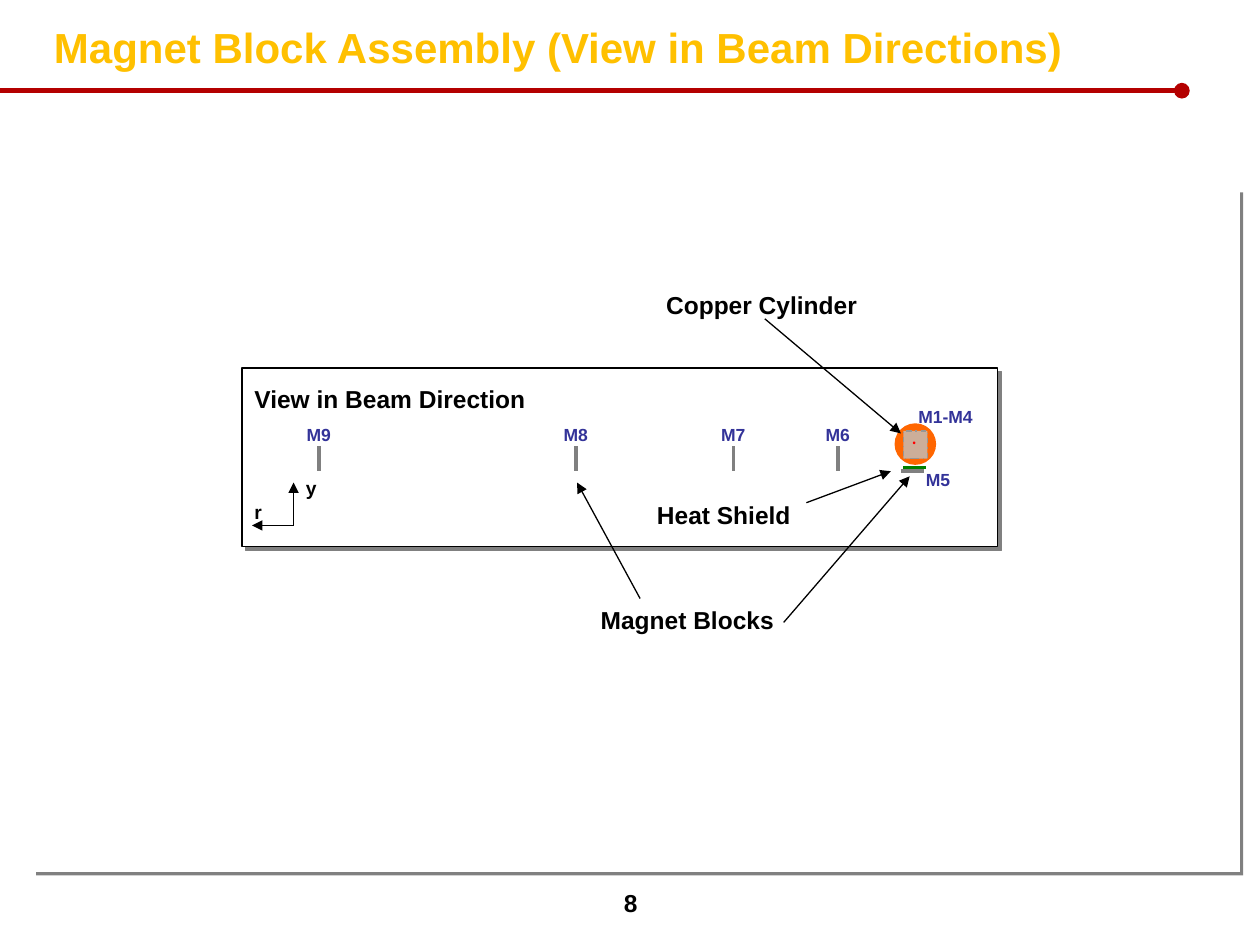
from pptx import Presentation
from pptx.dml.color import RGBColor
from pptx.enum.dml import MSO_LINE
from pptx.enum.shapes import MSO_CONNECTOR, MSO_SHAPE
from pptx.enum.text import MSO_ANCHOR, MSO_AUTO_SIZE, PP_ALIGN as Align
from pptx.oxml.ns import qn
from pptx.util import Inches, Pt
from lxml.etree import SubElement

COLORS = {
    "title": "FFC000", "rule": "B40000", "black": "000000", "white": "FFFFFF",
    "shadow": "808080", "magnet": "808080", "copper": "FF6600", "beam": "FF0000",
    "core": "C0C0C0", "core edge": "969696", "shield": "008000", "label": "333399",
}

TITLE = "Magnet Block Assembly (View in Beam Directions)"
PAGE_NUMBER = "8"
MAGNET_TOP, MAGNET_BOTTOM = 3.54, 3.74
MAGNETS = {"M6": 6.65, "M7": 5.82, "M8": 4.57, "M9": 2.53}
MAGNET_LABEL_WIDTH = 0.39
RING_LABELS = [("M1-M4", 7.19, 3.17, 0.63), ("M5", 7.25, 3.67, MAGNET_LABEL_WIDTH)]
CALLOUTS = [
    ("View in Beam Direction", 1.92, 3, 2.42, Align.LEFT),
    ("Heat Shield", 5.08, 3.92, 1.33, Align.CENTER),
    ("Copper Cylinder", 5.17, 2.25, 1.75, Align.CENTER),
    ("Magnet Blocks", 4.58, 4.75, 1.75, Align.CENTER),
]
AXIS_ORIGIN = (2.33, 4.17)
AXES = [("y", (2.33, 3.83), 2.33, 3.73), ("r", (2, 4.17), 1.92, 3.92)]
POINTERS = [
    ((6.4, 3.99), (7.07, 3.74)),
    ((6.07, 2.53), (7.15, 3.44)),
    ((6.22, 4.94), (7.22, 3.78)),
    ((5.08, 4.75), (4.58, 3.83)),
]

presentation = Presentation()
presentation.slide_width, presentation.slide_height = Inches(10), Inches(7.5)
slide = presentation.slides.add_slide(presentation.slide_layouts[6])


def rgb(name):
    return RGBColor.from_string(COLORS[name])


def add_text(text, left, top, width, height, size=14, color="black",
             align=Align.LEFT, wrap=True, anchor=MSO_ANCHOR.TOP):
    box = slide.shapes.add_textbox(*map(Inches, (left, top, width, height)))
    frame = box.text_frame
    frame.word_wrap = wrap
    frame.auto_size = MSO_AUTO_SIZE.SHAPE_TO_FIT_TEXT
    frame.vertical_anchor = anchor
    paragraph = frame.paragraphs[0]
    paragraph.text = text
    paragraph.alignment = align
    font = paragraph.font
    font.name, font.size, font.bold = "Arial", Pt(size), True
    font.color.rgb = rgb(color)


def add_line(start, end, color="black", width=0.75, tail=None):
    line = slide.shapes.add_connector(
        MSO_CONNECTOR.STRAIGHT, *map(Inches, (*start, *end)))
    line.line.color.rgb = rgb(color)
    line.line.width = Pt(width)
    if tail:
        SubElement(line.line._get_or_add_ln(), qn("a:tailEnd"), type=tail)
    SubElement(line._element.spPr, qn("a:effectLst"))


def add_shape(kind, left, top, width, height, fill, edge=None, shadow=False):
    shape = slide.shapes.add_shape(kind, *map(Inches, (left, top, width, height)))
    shape.fill.solid()
    shape.fill.fore_color.rgb = rgb(fill)
    if edge:
        shape.line.color.rgb = rgb(edge)
        shape.line.width = Pt(0.75)
    else:
        shape.line.fill.background()
    shape.shadow.inherit = False
    if shadow:
        effects = shape._element.spPr.find(qn("a:effectLst"))
        outer = SubElement(effects, qn("a:outerShdw"), dist=str(Pt(2.8)),
                           dir=str(45 * 60000), algn="ctr", rotWithShape="0")
        SubElement(outer, qn("a:srgbClr"), val=COLORS["shadow"])
    return shape


add_line((0, 0.72), (9.38, 0.72), "rule", 3, "oval")
add_text(PAGE_NUMBER, 3.42, 7, 3.17, 0.35, align=Align.CENTER)
add_text(TITLE, 0.33, 0.12, 8.28, 0.5, size=24, color="title", wrap=False,
         anchor=MSO_ANCHOR.MIDDLE)

add_shape(MSO_SHAPE.RECTANGLE, 0.26, 1.5, 9.58, 5.42, "white", shadow=True)
add_shape(MSO_SHAPE.RECTANGLE, 1.92, 2.92, 6, 1.42, "white", "black", shadow=True)

add_shape(MSO_SHAPE.OVAL, 7.1, 3.36, 0.33, 0.33, "copper")
add_line((7.15, 3.74), (7.33, 3.74), "magnet", 2)
core = add_shape(MSO_SHAPE.RECTANGLE, 7.17, 3.42, 0.19, 0.22, "core", "core edge")
core.line.dash_style = MSO_LINE.DASH_DOT
core_color = core._element.spPr.find(qn("a:solidFill")).find(qn("a:srgbClr"))
SubElement(core_color, qn("a:alpha"), val="80000")
add_shape(MSO_SHAPE.OVAL, 7.25, 3.51, 0.01, 0.01, "beam", "beam")
add_line((7.17, 3.71), (7.35, 3.71), "shield", 2)

for name, x in MAGNETS.items():
    add_line((x, MAGNET_TOP), (x, MAGNET_BOTTOM), "magnet", 2)
    add_text(name, x - MAGNET_LABEL_WIDTH / 2, 3.32, MAGNET_LABEL_WIDTH, 0.27,
             size=10, color="label", wrap=False)

for name, left, top, width in RING_LABELS:
    add_text(name, left, top, width, 0.27, size=10, color="label", wrap=False)

for name, tip, left, top in AXES:
    add_line(AXIS_ORIGIN, tip, tail="triangle")
    add_text(name, left, top, 0.25, 0.28, size=11, align=Align.CENTER)

for text, left, top, width, align in CALLOUTS:
    add_text(text, left, top, width, 0.33, align=align)

for start, end in POINTERS:
    add_line(start, end, tail="triangle")

presentation.save("out.pptx")
